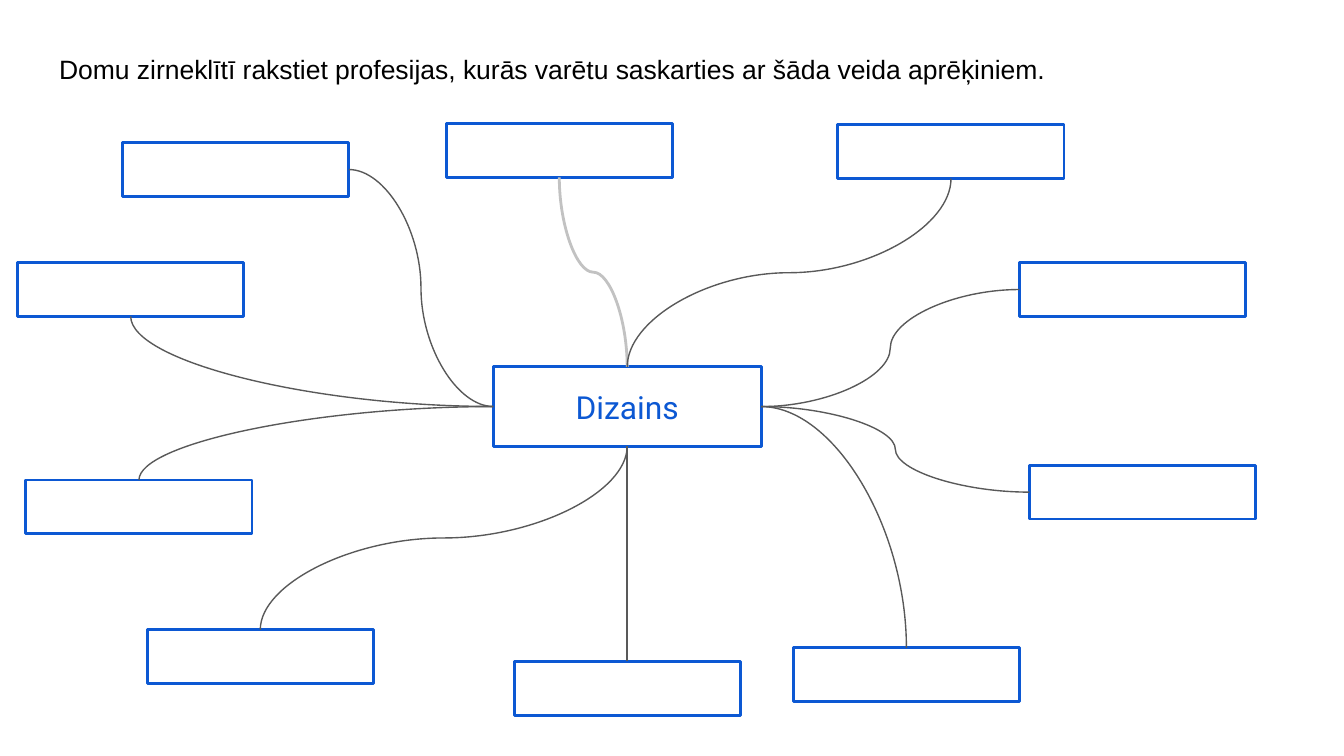
from dataclasses import dataclass

from lxml import etree
from pptx import Presentation
from pptx.dml.color import RGBColor
from pptx.enum.shapes import MSO_CONNECTOR, MSO_SHAPE
from pptx.enum.text import MSO_ANCHOR, MSO_AUTO_SIZE, PP_ALIGN
from pptx.oxml.ns import qn
from pptx.util import Inches, Pt

RECTANGLE = MSO_SHAPE.RECTANGLE
CURVE = MSO_CONNECTOR.CURVE
TOP, LEFT, BOTTOM, RIGHT = range(4)
VERTICAL_SIDES = (TOP, BOTTOM)
TITLE_ONLY = 5

COLUMNS, ROWS = 100, 56.25
CELL = Inches(0.1)
TITLE_BOX = (3.4, 2.95, 93.2, 6.3)
HUB_BOX = (36.7, 27.3, 19.94, 5.9)
BRANCH_SIZE = (16.84, 4)


@dataclass(frozen=True)
class Theme:
    accent: RGBColor = RGBColor(0x0C, 0x58, 0xD3)
    text: RGBColor = RGBColor(0x00, 0x00, 0x00)
    link: RGBColor = RGBColor(0x59, 0x59, 0x59)
    pale_link: RGBColor = RGBColor(0xC2, 0xC2, 0xC2)
    title_font: str = "Arial"
    hub_font: str = "Roboto"
    title_size: float = 14.2
    hub_size: float = 17
    thick: float = 1.5
    thin: float = 0.75


@dataclass(frozen=True)
class Branch:
    column: float
    row: float
    side: int
    hub_side: int
    from_hub: bool = False
    pale: bool = False


THEME = Theme()
BRANCHES = (
    Branch(33.2, 9.2, BOTTOM, TOP, from_hub=True, pale=True),
    Branch(62.34, 9.28, BOTTOM, TOP, from_hub=True),
    Branch(75.84, 19.54, LEFT, RIGHT, from_hub=True),
    Branch(76.6, 34.62, LEFT, RIGHT, from_hub=True),
    Branch(59.02, 48.2, TOP, RIGHT, from_hub=True),
    Branch(38.25, 49.22, TOP, BOTTOM),
    Branch(10.95, 46.86, TOP, BOTTOM),
    Branch(1.92, 35.72, TOP, LEFT),
    Branch(1.3, 19.54, BOTTOM, LEFT),
    Branch(9.12, 10.62, RIGHT, LEFT),
)


def grid(*cells):
    return [round(cell * CELL) for cell in cells]


def set_insets(frame):
    frame.margin_left = frame.margin_right = CELL
    frame.margin_top = frame.margin_bottom = CELL


def add_run(paragraph, text, font, size, color):
    run = paragraph.add_run()
    run.text = text
    run.font.name = font
    run.font.size = Pt(size)
    run.font.color.rgb = color


def place_title(slide, box, text):
    title = slide.shapes.title
    title.left, title.top, title.width, title.height = grid(*box)
    frame = title.text_frame
    frame.word_wrap = True
    frame.auto_size = MSO_AUTO_SIZE.NONE
    frame.vertical_anchor = MSO_ANCHOR.TOP
    set_insets(frame)
    paragraph = frame.paragraphs[0]
    paragraph.alignment = PP_ALIGN.LEFT
    add_run(paragraph, text, THEME.title_font, THEME.title_size, THEME.text)


def add_box(slide, box):
    shape = slide.shapes.add_shape(RECTANGLE, *grid(*box))
    shape.shadow.inherit = False
    shape.fill.background()
    shape.line.color.rgb = THEME.accent
    shape.line.width = Pt(THEME.thick)
    return shape


def add_hub(slide, box, text):
    hub = add_box(slide, box)
    frame = hub.text_frame
    frame.word_wrap = True
    frame.vertical_anchor = MSO_ANCHOR.MIDDLE
    set_insets(frame)
    paragraph = frame.paragraphs[0]
    paragraph.alignment = PP_ALIGN.CENTER
    add_run(paragraph, text, THEME.hub_font, THEME.hub_size, THEME.accent)
    return hub


def shape_curve(connector, start_side, end_side):
    dx = connector.end_x - connector.begin_x
    dy = connector.end_y - connector.begin_y
    center_x = (connector.begin_x + connector.end_x) // 2
    center_y = (connector.begin_y + connector.end_y) // 2
    starts_vertical = start_side in VERTICAL_SIDES
    ends_vertical = end_side in VERTICAL_SIDES

    if starts_vertical:
        along, across, rotation = dy, -dx, 90
    else:
        along, across, rotation = dx, dy, 0
    flip = along < 0
    if across < 0 or (starts_vertical and across == 0):
        rotation += 180
        flip = not flip

    connector.width, connector.height = abs(along), abs(across)
    connector.left = center_x - abs(along) // 2
    connector.top = center_y - abs(across) // 2

    properties = connector._element.spPr
    transform = properties.find(qn("a:xfrm"))
    transform.set("rot", str(rotation * 60000))
    transform.set("flipH", str(int(flip)))
    transform.set("flipV", "0")
    if starts_vertical != ends_vertical:
        properties.find(qn("a:prstGeom")).set("prst", "curvedConnector2")


def add_link(slide, start, start_side, end, end_side, color, width):
    connector = slide.shapes.add_connector(CURVE, 0, 0, 0, 0)
    connector.begin_connect(start, start_side)
    connector.end_connect(end, end_side)
    shape_curve(connector, start_side, end_side)
    connector.line.color.rgb = color
    connector.line.width = Pt(width)
    etree.SubElement(connector._element.spPr, qn("a:effectLst"))


def add_spider(slide, hub_box, hub_text, branches):
    hub = add_hub(slide, hub_box, hub_text)
    boxes = [add_box(slide, (branch.column, branch.row, *BRANCH_SIZE)) for branch in branches]
    for branch, box in zip(branches, boxes):
        ends = [(box, branch.side), (hub, branch.hub_side)]
        if branch.from_hub:
            ends.reverse()
        color = THEME.pale_link if branch.pale else THEME.link
        width = THEME.thick if branch.pale else THEME.thin
        add_link(slide, *ends[0], *ends[1], color, width)


def main():
    presentation = Presentation()
    presentation.slide_width, presentation.slide_height = grid(COLUMNS, ROWS)
    slide = presentation.slides.add_slide(presentation.slide_layouts[TITLE_ONLY])
    place_title(
        slide,
        TITLE_BOX,
        "Domu zirneklītī rakstiet profesijas, kurās varētu saskarties ar šāda veida aprēķiniem.",
    )
    add_spider(slide, HUB_BOX, "Dizains", BRANCHES)
    presentation.save("out.pptx")


if __name__ == "__main__":
    main()
